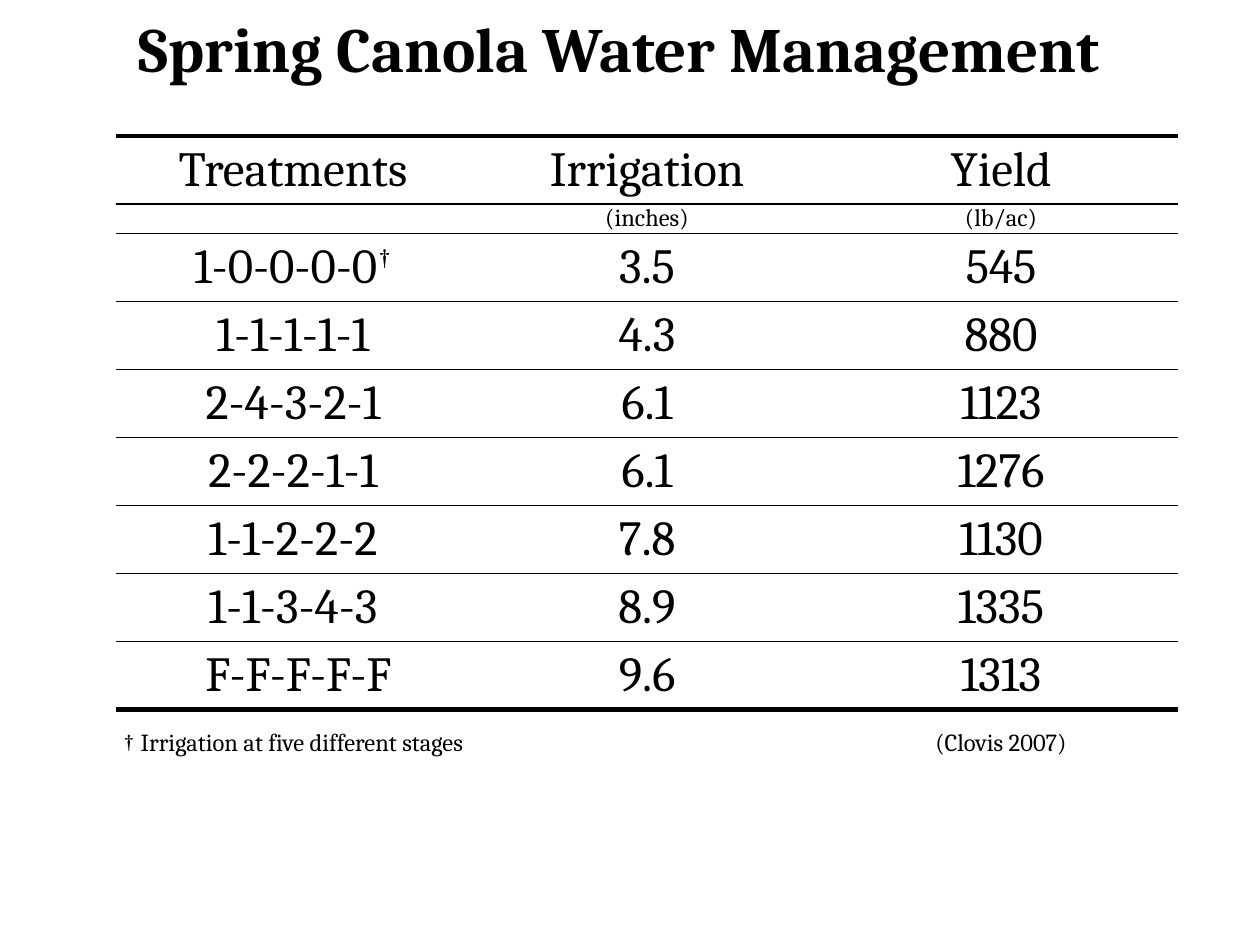
from lxml import etree
from pptx import Presentation
from pptx.dml.color import RGBColor
from pptx.enum.text import MSO_ANCHOR, PP_ALIGN
from pptx.oxml.ns import qn
from pptx.util import Inches, Pt

CENTER = PP_ALIGN.CENTER
MIDDLE = MSO_ANCHOR.MIDDLE

COLORS = {"ink": "000000"}
FONT = "Cambria"
TITLE_SIZE, BODY_SIZE, SMALL_SIZE = 36, 28, 14
THICK, THIN = 3, 1
SUPERSCRIPT = "30000"
DAGGER = "†"

ROW_HEIGHT, UNIT_ROW_HEIGHT = 0.54, 0.21
COLUMN_WIDTH = 2.81
TABLE_LEFT, TABLE_TOP = 0.92, 1.08

HEADINGS = ("Treatments", "Irrigation", "Yield")
UNITS = ("", "(inches)", "(lb/ac)")
RESULTS = [
    ("1-0-0-0-0†", "3.5", "545"),
    ("1-1-1-1-1", "4.3", "880"),
    ("2-4-3-2-1", "6.1", "1123"),
    ("2-2-2-1-1", "6.1", "1276"),
    ("1-1-2-2-2", "7.8", "1130"),
    ("1-1-3-4-3", "8.9", "1335"),
    (" F-F-F-F-F", "9.6", "1313"),
]
NOTES = ("† Irrigation at five different stages", "", "(Clovis 2007)")

NO_MARGINS = {f"margin_{side}": 0 for side in ("left", "top", "right", "bottom")}


def apply_format(target, values):
    for name, value in values.items():
        setattr(target, name, value)


def add_run(paragraph, text, size, bold=False):
    run = paragraph.add_run()
    run.text = text
    apply_format(run.font, {"name": FONT, "size": Pt(size), "bold": bold})
    run.font.color.rgb = RGBColor.from_string(COLORS["ink"])
    return run


def add_title(slide, text, slide_width, slide_height):
    title = slide.shapes.add_textbox(
        Inches(0.33), 0, int(slide_width * 0.917), int(slide_height * 0.1))
    frame = title.text_frame
    apply_format(frame, {"word_wrap": True, "vertical_anchor": MIDDLE})
    heading = frame.paragraphs[0]
    heading.alignment = CENTER
    add_run(heading, text, TITLE_SIZE, bold=True)


def set_rules(cell, top, bottom):
    """Draw horizontal rules of the given point widths; 0 means no rule."""
    properties = cell._tc.get_or_add_tcPr()
    for side, width in (("L", 0), ("R", 0), ("T", top), ("B", bottom)):
        rule = etree.SubElement(properties, qn(f"a:ln{side}"), w=str(Pt(width)))
        if width:
            fill = etree.SubElement(rule, qn("a:solidFill"))
            etree.SubElement(fill, qn("a:srgbClr"), val=COLORS["ink"])
        else:
            etree.SubElement(rule, qn("a:noFill"))


def fill_cell(cell, text, size):
    apply_format(cell, {"vertical_anchor": MIDDLE, **NO_MARGINS})
    cell.fill.background()
    paragraph = cell.text_frame.paragraphs[0]
    paragraph.alignment = CENTER
    if not text:
        # An empty cell still needs a small font to keep its row low.
        etree.SubElement(paragraph._p, qn("a:endParaRPr"), sz=str(size * 100))
    elif text.endswith(DAGGER):
        add_run(paragraph, text.removesuffix(DAGGER), size)
        mark = add_run(paragraph, DAGGER, size)
        mark._r.get_or_add_rPr().set("baseline", SUPERSCRIPT)
    else:
        add_run(paragraph, text, size)


def add_results_table(slide):
    rows = [HEADINGS, UNITS, *RESULTS, NOTES]
    heights = [ROW_HEIGHT] * len(rows)
    heights[rows.index(UNITS)] = UNIT_ROW_HEIGHT
    rules = [THICK] + [THIN] * (len(rows) - 2) + [THICK, 0]

    table = slide.shapes.add_table(
        len(rows), len(HEADINGS), Inches(TABLE_LEFT), Inches(TABLE_TOP),
        Inches(COLUMN_WIDTH * len(HEADINGS)), Inches(sum(heights))).table
    apply_format(table, {"first_row": False, "horz_banding": False})
    for column in table.columns:
        column.width = Inches(COLUMN_WIDTH)

    for index, (texts, height) in enumerate(zip(rows, heights)):
        table.rows[index].height = Inches(height)
        size = SMALL_SIZE if texts in (UNITS, NOTES) else BODY_SIZE
        for cell, text in zip(table.rows[index].cells, texts):
            set_rules(cell, rules[index], rules[index + 1])
            fill_cell(cell, text, size)


def main():
    presentation = Presentation()
    apply_format(presentation, {"slide_width": Inches(10), "slide_height": Inches(7.5)})
    slide = presentation.slides.add_slide(presentation.slide_layouts[6])
    add_title(slide, "Spring Canola Water Management",
              presentation.slide_width, presentation.slide_height)
    add_results_table(slide)
    presentation.save("out.pptx")


if __name__ == "__main__":
    main()
